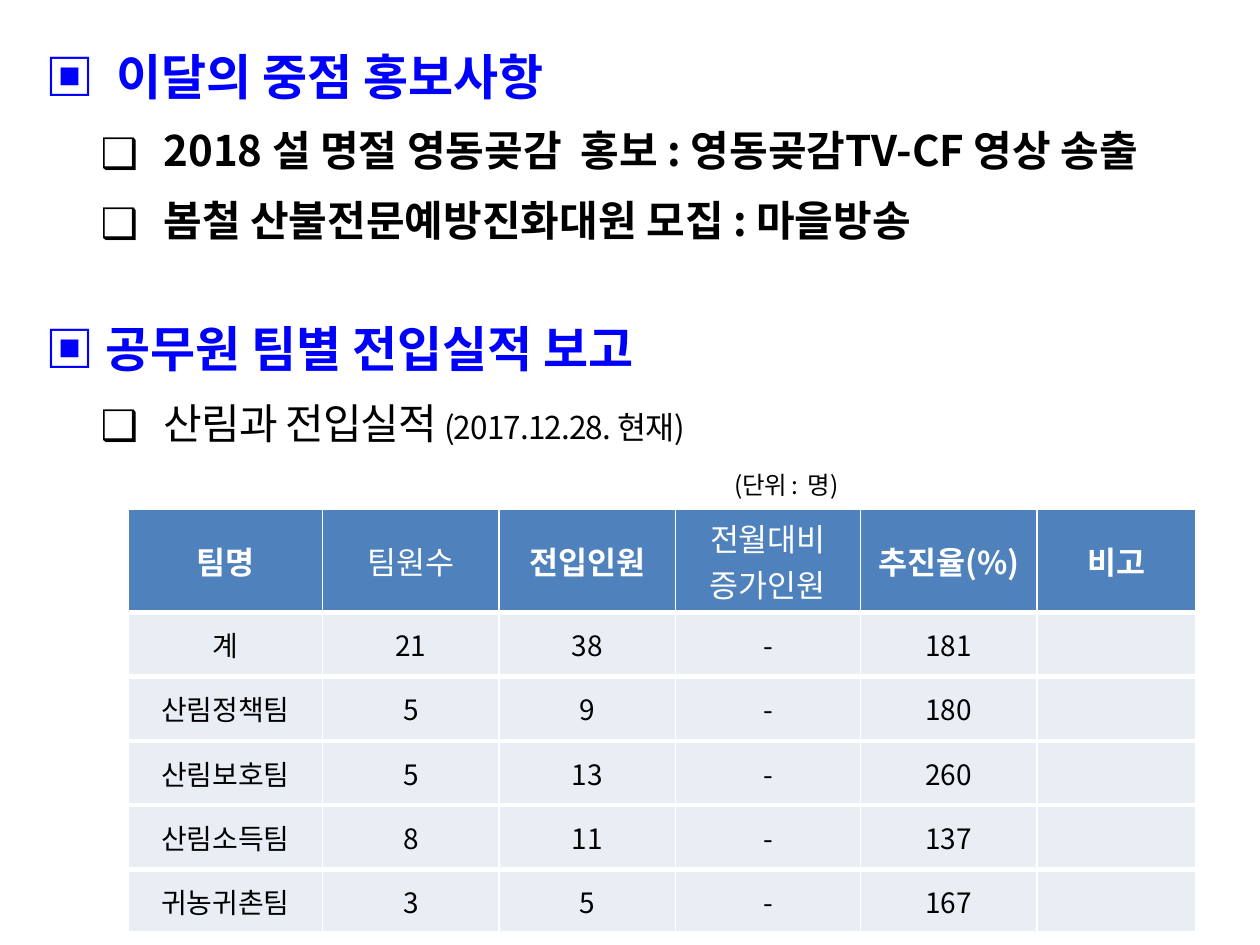
from lxml import etree
from pptx import Presentation
from pptx.dml.color import RGBColor
from pptx.enum.text import MSO_ANCHOR, PP_ALIGN
from pptx.oxml.ns import qn
from pptx.util import Inches, Pt

FONT = "Noto Sans CJK KR"
BLUE, BLACK, WHITE = "0000FF", "000000", "FFFFFF"
HEADER_FILL, BODY_FILL = "4F81BD", "E9EDF4"
CENTER, MIDDLE = PP_ALIGN.CENTER, MSO_ANCHOR.MIDDLE

HEADING_GAP, SECTION_GAP = 5.6, 30
COLUMN_WIDTHS = [1.54, 1.4, 1.4, 1.47, 1.4, 1.26]
HEADER_HEIGHT, ROW_HEIGHT = 0.82, 0.51
# Column title and whether it is bold
COLUMNS = [("팀명", True), ("팀원수", False), ("전입인원", True),
           ("전월대비 증가인원", False), ("추진율(%)", True), ("비고", True)]
TEAMS = [
    ("계", "21", "38", "-", "181", ""),
    ("산림정책팀", "5", "9", "-", "180", ""),
    ("산림보호팀", "5", "13", "-", "260", ""),
    ("산림소득팀", "8", "11", "-", "137", ""),
    ("귀농귀촌팀", "3", "5", "-", "167", ""),
]


def color(value):
    return RGBColor.from_string(value)


def add_text(paragraph, text, size=24, ink=BLACK, bold=False, spacing=0):
    run = paragraph.add_run()
    run.text = text
    font = run.font
    font.size, font.bold, font.name = Pt(size), bold, FONT
    font.color.rgb = color(ink)
    properties = run._r.get_or_add_rPr()
    etree.SubElement(properties, qn("a:ea"), typeface=FONT)
    properties.set("kern", "0")
    properties.set("spc", str(int(spacing * 100)))


def add_line(frame, left, hanging=0, line=40, before=0, bullet=None):
    first = frame.paragraphs[0]
    paragraph = frame.add_paragraph() if first.runs else first
    paragraph.line_spacing, paragraph.space_before = Pt(line), Pt(before)
    properties = paragraph._p.get_or_add_pPr()
    properties.set("marL", str(Inches(left)))
    properties.set("indent", str(-Inches(hanging)))
    if bullet:
        tint = etree.SubElement(properties, qn("a:buClr"))
        etree.SubElement(tint, qn("a:srgbClr"), val=BLACK)
        etree.SubElement(properties, qn("a:buFont"), typeface=FONT)
        etree.SubElement(properties, qn("a:buChar"), char=bullet)
    return paragraph


def add_heading(frame, text, before=HEADING_GAP):
    add_text(add_line(frame, 0.56, 0.5, before=before), text,
             size=28, ink=BLUE, bold=True)


def add_item(frame):
    return add_line(frame, 1, 0.5, bullet="❑")


def add_outline(slide):
    frame = slide.shapes.add_textbox(
        Inches(0.2), Inches(0.23), Inches(9.77), Inches(7.27)).text_frame
    frame.word_wrap = True

    # Promotion topics
    add_heading(frame, "▣  이달의 중점 홍보사항")
    for topic in ("2018 설 명절 영동곶감  홍보 : 영동곶감TV-CF 영상 송출",
                  "봄철 산불전문예방진화대원 모집 : 마을방송"):
        add_text(add_item(frame), topic, bold=True)

    # Transfer report
    add_heading(frame, "▣ 공무원 팀별 전입실적 보고", HEADING_GAP + SECTION_GAP)
    report = add_item(frame)
    add_text(report, "산림과 전입실적", spacing=-0.5)
    add_text(report, " (2017.12.28. 현재)", size=18, spacing=-0.5)
    add_text(add_line(frame, 5.53, line=30), "(단위 :  명)", size=14, spacing=-0.5)


def fill_cell(cell, text, fill, top=3, **text_format):
    properties = cell._tc.get_or_add_tcPr()
    for side, width in (("lnL", 1), ("lnR", 1), ("lnT", top), ("lnB", 3)):
        border = etree.SubElement(properties, qn("a:" + side), w=str(Pt(width)))
        solid = etree.SubElement(border, qn("a:solidFill"))
        etree.SubElement(solid, qn("a:srgbClr"), val=WHITE)
    cell.fill.solid()
    cell.fill.fore_color.rgb = color(fill)
    cell.vertical_anchor = MIDDLE
    if text:
        paragraph = cell.text_frame.paragraphs[0]
        paragraph.alignment = CENTER
        add_text(paragraph, text, **text_format)


def add_team_table(slide):
    heights = [HEADER_HEIGHT] + [ROW_HEIGHT] * len(TEAMS)
    table = slide.shapes.add_table(
        len(heights), len(COLUMNS), Inches(1.02), Inches(4.04),
        Inches(sum(COLUMN_WIDTHS)), Inches(sum(heights))).table
    table.first_row = table.horz_banding = False
    for column, width in zip(table.columns, COLUMN_WIDTHS):
        column.width = Inches(width)
    for row, height in zip(table.rows, heights):
        row.height = Inches(height)

    # Header row, then one row per team
    for c, (title, bold) in enumerate(COLUMNS):
        fill_cell(table.cell(0, c), title, HEADER_FILL, top=1,
                  size=18, ink=WHITE, bold=bold)
    for r, team in enumerate(TEAMS, start=1):
        for c, value in enumerate(team):
            fill_cell(table.cell(r, c), value, BODY_FILL, size=16)


def main():
    presentation = Presentation()
    presentation.slide_width, presentation.slide_height = Inches(10), Inches(7.5)
    slide = presentation.slides.add_slide(presentation.slide_layouts[6])
    add_outline(slide)
    add_team_table(slide)
    presentation.save("out.pptx")


if __name__ == "__main__":
    main()
